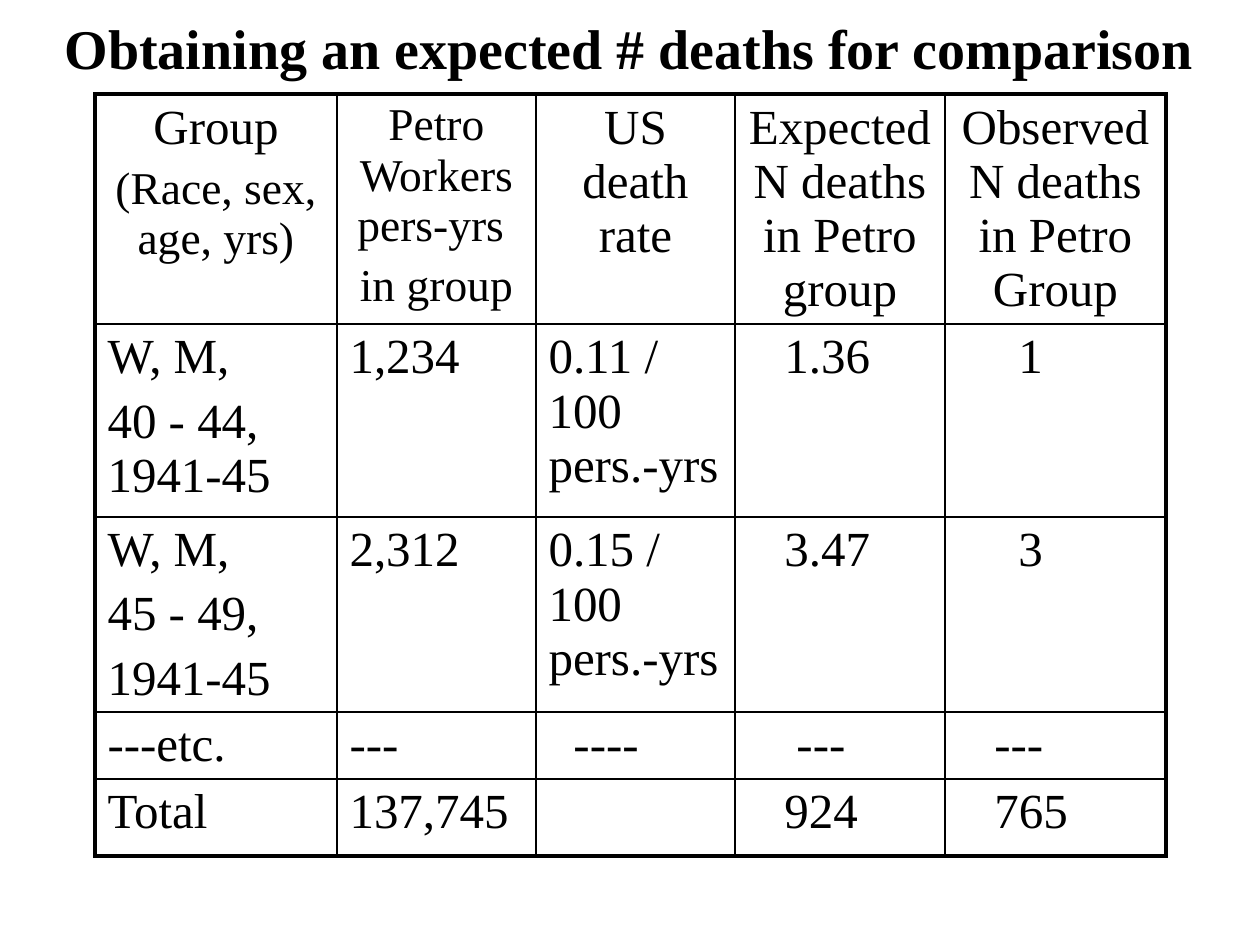
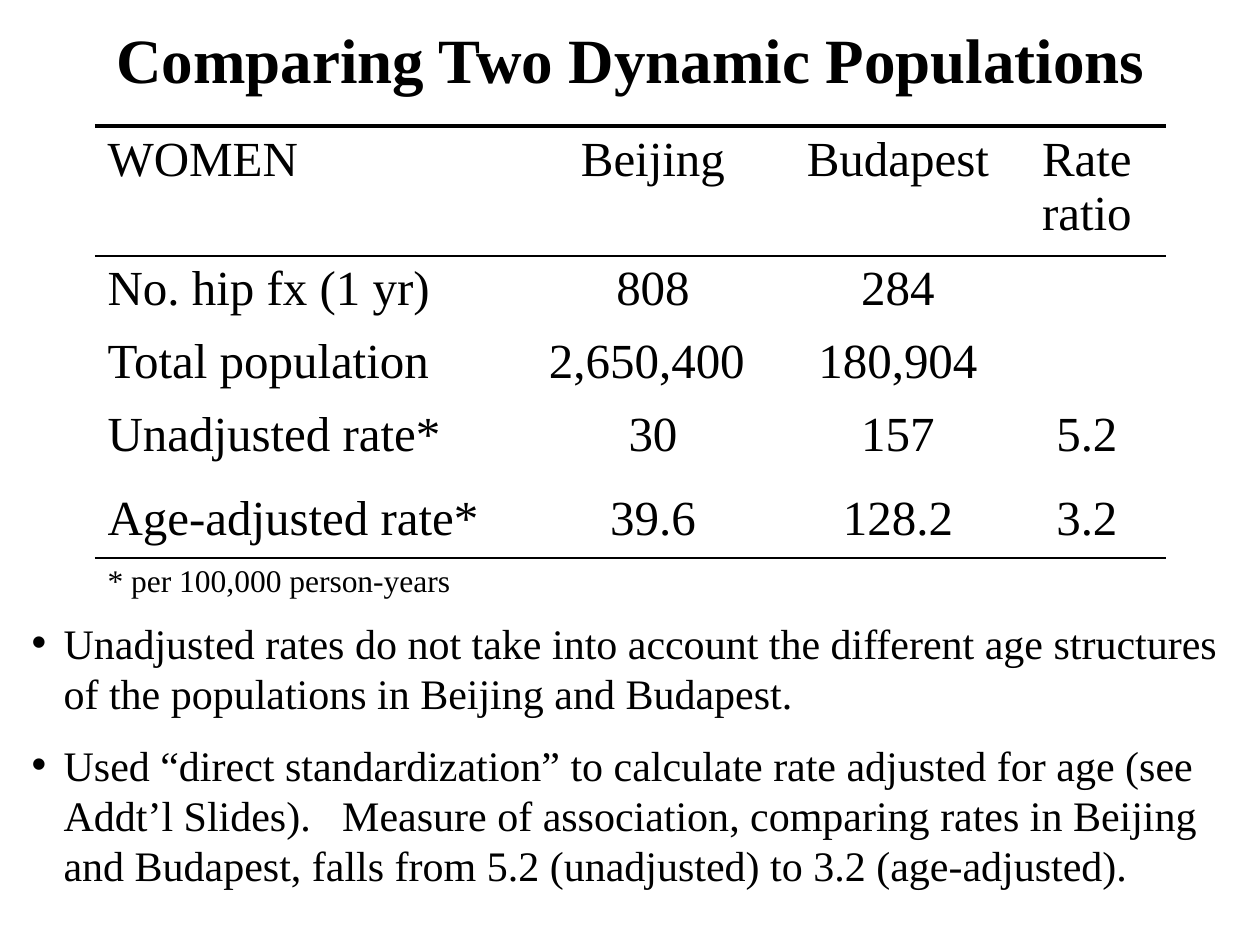
from dataclasses import dataclass

from lxml import etree
from pptx import Presentation
from pptx.dml.color import RGBColor
from pptx.enum.text import MSO_ANCHOR, MSO_AUTO_SIZE, PP_ALIGN
from pptx.oxml.ns import qn
from pptx.util import Emu, Pt

LEFT, CENTER = PP_ALIGN.LEFT, PP_ALIGN.CENTER
TOP, MIDDLE = MSO_ANCHOR.TOP, MSO_ANCHOR.MIDDLE
NO_AUTOFIT = MSO_AUTO_SIZE.NONE
TITLE_AND_BODY, TITLE_ONLY = 1, 5
PX_PER_INCH = 126
SLIDE_WIDTH, SLIDE_HEIGHT = 1260, 945


@dataclass(frozen=True)
class Theme:
    font: str = "Times New Roman"
    ink: str = "000000"
    paper: str = "FFFFFF"
    table_size: int = 28
    small_header_size: int = 26
    bullet_size: int = 24
    note_size: int = 18
    thin: float = 1
    thick: float = 2.25


THEME = Theme()


@dataclass(frozen=True)
class Entry:
    """Text of a table cell, one paragraph per line, and its format."""
    text: str
    sizes: tuple = (THEME.table_size,)
    align: PP_ALIGN = LEFT
    indent: int = 0


def px(length):
    return Emu(round(length * 914400 / PX_PER_INCH))


def write_text(frame, text, *, sizes, bold=False, align=LEFT, gap=0.2):
    """Write one paragraph per line; gap is a share of the type size."""
    for index, line in enumerate(text.split("\n")):
        paragraph = frame.paragraphs[0] if index == 0 else frame.add_paragraph()
        size = sizes[min(index, len(sizes) - 1)]
        paragraph.alignment = align
        paragraph.space_before = Pt(round(size * gap, 1) if index else 0)
        run = paragraph.add_run()
        run.text = line
        run.font.name = THEME.font
        run.font.size = Pt(size)
        run.font.bold = bold
        run.font.color.rgb = RGBColor.from_string(THEME.ink)


def set_borders(cell, widths):
    """Draw the edges named in widths and clear the others."""
    properties = cell._tc.get_or_add_tcPr()
    for edge in "LRTB":
        line = etree.SubElement(properties, qn(f"a:ln{edge}"))
        if edge in widths:
            line.set("w", str(Pt(widths[edge])))
            fill = etree.SubElement(line, qn("a:solidFill"))
            etree.SubElement(fill, qn("a:srgbClr"), val=THEME.ink)
        else:
            etree.SubElement(line, qn("a:noFill"))


class Deck:
    def __init__(self, theme):
        self.theme = theme
        self.presentation = Presentation()
        self.presentation.slide_width = px(SLIDE_WIDTH)
        self.presentation.slide_height = px(SLIDE_HEIGHT)
        self.slide = None

    def add_slide(self, layout):
        layouts = self.presentation.slide_layouts
        self.slide = self.presentation.slides.add_slide(layouts[layout])
        background = self.slide.background.fill
        background.solid()
        background.fore_color.rgb = RGBColor.from_string(self.theme.paper)

    def place(self, shape, box, anchor):
        shape.left, shape.top, shape.width, shape.height = map(px, box)
        frame = shape.text_frame
        frame.word_wrap = True
        frame.auto_size = NO_AUTOFIT
        frame.vertical_anchor = anchor
        return frame

    def title(self, text, box, size):
        frame = self.place(self.slide.shapes.title, box, MIDDLE)
        write_text(frame, text, sizes=(size,), bold=True, align=CENTER)

    def bullets(self, items, box):
        frame = self.place(self.slide.placeholders[1], box, TOP)
        write_text(frame, "\n".join(items), sizes=(self.theme.bullet_size,), gap=0.5)
        for paragraph in frame.paragraphs:
            properties = paragraph._p.get_or_add_pPr()
            properties.set("marL", str(px(47)))
            properties.set("indent", str(-px(32)))
            etree.SubElement(properties, qn("a:buChar"), char="•")

    def table(self, rows, left, top, widths, heights, borders):
        """borders(row, column) gives the line widths of a cell by edge."""
        frame = self.slide.shapes.add_table(
            len(heights), len(widths), px(left), px(top),
            px(sum(widths)), px(sum(heights)))
        table = frame.table
        table.first_row = table.horz_banding = False
        for column, width in zip(table.columns, widths):
            column.width = px(width)
        for row, height in zip(table.rows, heights):
            row.height = px(height)
        for row_index, entries in enumerate(rows):
            for column_index, entry in enumerate(entries):
                cell = table.cell(row_index, column_index)
                set_borders(cell, borders(row_index, column_index))
                cell.fill.background()
                if entry.text:
                    cell.margin_left = cell.margin_left + px(entry.indent)
                    write_text(cell.text_frame, entry.text,
                               sizes=entry.sizes, align=entry.align)
        return table


def expected_deaths_slide(deck):
    deck.add_slide(TITLE_ONLY)
    deck.title("Obtaining an expected # deaths for comparison", (10, 0, 1239, 94), 32)

    # Header cells
    theme = deck.theme
    small = theme.small_header_size
    headers = [
        Entry("Group\n(Race, sex, age, yrs)", (theme.table_size, small), CENTER),
        Entry("Petro Workers pers-yrs \nin group", (small,), CENTER),
        Entry("US death rate", align=CENTER),
        Entry("Expected N deaths in Petro group", align=CENTER),
        Entry("Observed N deaths in Petro Group", align=CENTER),
    ]

    # Body cells, with the indent of each in px
    body = [
        ("W, M,\n40 - 44, 1941-45", "1,234", "0.11 / 100 pers.-yrs", "1.36", "1"),
        ("W, M,\n45 - 49,\n1941-45", "2,312", "0.15 / 100 pers.-yrs", "3.47", "3"),
        ("---etc.", "---", "----", "---", "---"),
        ("Total", "137,745", "", "924", "765"),
    ]
    indents = [(0, 0, 0, 37, 61), (0, 0, 0, 37, 61), (0, 0, 25, 49, 37), (0, 0, 0, 37, 37)]
    rows = [headers] + [
        [Entry(text, indent=indent) for text, indent in zip(texts, row_indents)]
        for texts, row_indents in zip(body, indents)
    ]

    # Full grid with a heavier outline
    widths, heights = (242, 199, 199, 210, 221), (230, 193, 195, 67, 77)

    def grid_borders(row, column):
        outer = {"L": column == 0, "R": column == len(widths) - 1,
                 "T": row == 0, "B": row == len(heights) - 1}
        return {edge: theme.thick if is_outer else theme.thin
                for edge, is_outer in outer.items()}

    deck.table(rows, 95, 94, widths, heights, grid_borders)


def two_populations_slide(deck):
    deck.add_slide(TITLE_AND_BODY)
    deck.title("Comparing Two Dynamic Populations", (95, -21, 1071, 158), 36)

    # Takeaways
    deck.bullets([
        "Unadjusted rates do not take into account the different age structures "
        "of the populations in Beijing and Budapest.",
        "Used “direct standardization” to calculate rate adjusted for age "
        "(see Addt’l Slides).   Measure of association, comparing rates in Beijing "
        "and Budapest, falls from 5.2 (unadjusted) to 3.2 (age-adjusted).",
    ], (4, 611, 1256, 292))

    # Rates table
    theme = deck.theme
    values = [
        ("WOMEN", "Beijing", "Budapest", "Rate ratio"),
        ("No. hip fx (1 yr)", "808", "284", ""),
        ("Total population", "2,650,400 ", "180,904", ""),
        ("Unadjusted rate*", "30", "157", "5.2"),
        ("Age-adjusted rate*", "39.6", "128.2", "3.2"),
    ]
    rows = [[Entry(text, align=CENTER if column else LEFT)
             for column, text in enumerate(texts)] for texts in values]
    note = Entry("* per 100,000 person-years", (theme.note_size,))
    rows.append([note] + [Entry("")] * 3)

    # Horizontal rules only
    rules = {0: {"T": theme.thick, "B": theme.thin}, 1: {"T": theme.thin},
             4: {"B": theme.thin}, 5: {"T": theme.thin}}
    table = deck.table(rows, 95, 126, (423, 270, 220, 158), (130, 73, 73, 84, 72, 63),
                       lambda row, column: rules.get(row, {}))
    table.cell(5, 0).merge(table.cell(5, 3))


def main():
    deck = Deck(THEME)
    expected_deaths_slide(deck)
    two_populations_slide(deck)
    deck.presentation.save("out.pptx")


if __name__ == "__main__":
    main()
